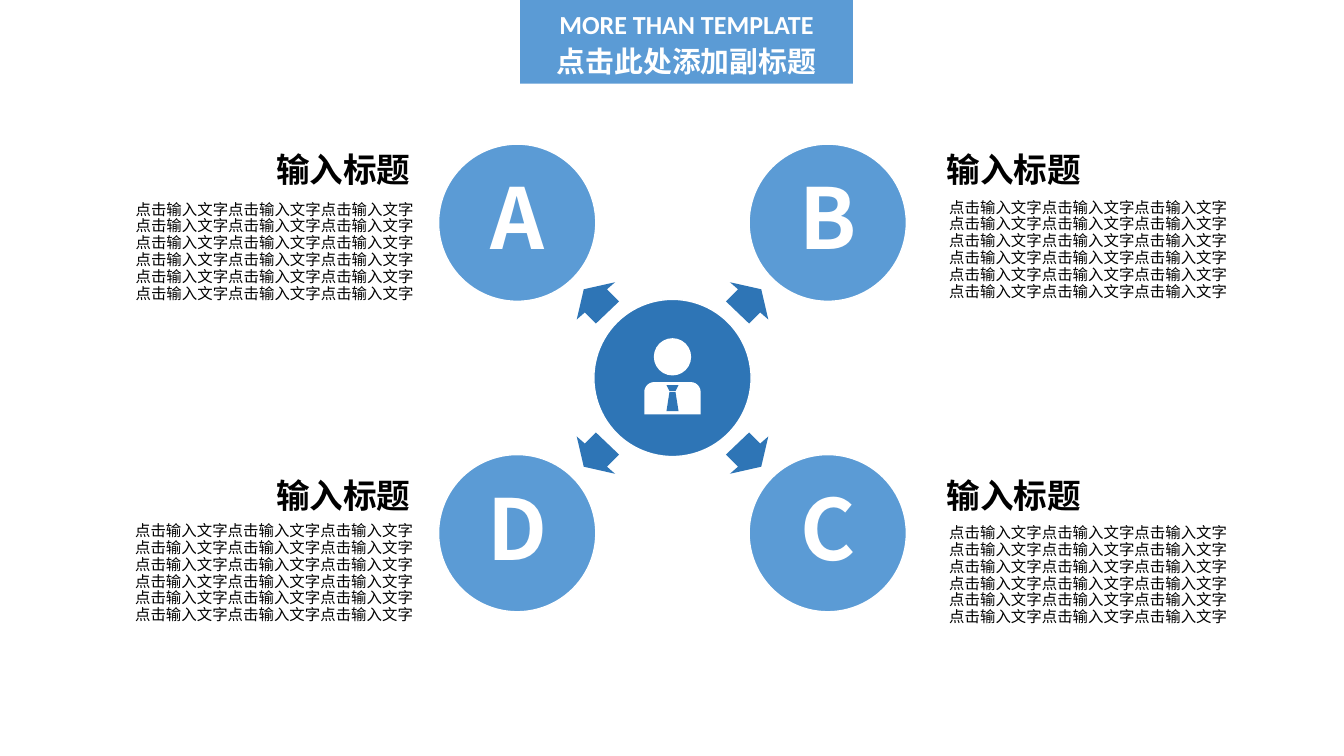
from pptx import Presentation
from pptx.dml.color import RGBColor
from pptx.enum.shapes import MSO_SHAPE as SHAPE
from pptx.enum.text import MSO_ANCHOR as ANCHOR, MSO_AUTO_SIZE as AUTOSIZE, PP_ALIGN as ALIGN
from pptx.oxml.ns import qn
from pptx.util import Inches, Pt

CJK_FONT = "Noto Sans CJK SC"
LIGHT_BLUE, DARK_BLUE, WHITE, BLACK = "5B9BD5", "2E75B6", "FFFFFF", "000000"
RADIUS = 0.78
SPREAD = 1.54  # offset of each lettered circle from the hub, in x and y
HUB = (6.67, 3.75)
# Lower-right arrow outline, as offsets from the hub centre
ARROW = [(0.53, 0.76), (0.65, 0.88), (0.57, 0.95), (0.88, 0.88),
         (0.95, 0.58), (0.87, 0.65), (0.76, 0.54)]
# Tie knot and blade, as offsets from the top centre of the torso
TIE = [[(-0.06, 0.03), (0.06, 0.03), (0.03, 0.09), (-0.03, 0.09)],
       [(-0.03, 0.1), (0.03, 0.1), (0.06, 0.29), (-0.06, 0.29)]]
HEADING = "输入标题"
BODY = "点击输入文字" * 18
# Letter, x sign, y sign, heading (left, top), body (left, top, width)
TOPICS = [
    ("A", -1, -1, (2.62, 1.43), (1.22, 1.95, 3.01)),
    ("B", 1, -1, (9.29, 1.43), (9.26, 1.93, 3.07)),
    ("C", 1, 1, (9.29, 4.66), (9.26, 5.16, 3.07)),
    ("D", -1, 1, (2.62, 4.66), (1.18, 5.14, 3.08)),
]


def rgb(value):
    return RGBColor.from_string(value)


def write(paragraph, text, size=11, font=CJK_FONT, color=BLACK, bold=False,
          align=ALIGN.LEFT, spacing=None):
    paragraph.alignment = align
    paragraph.line_spacing = spacing
    run = paragraph.add_run()
    run.text = text
    run.font.size, run.font.bold, run.font.name = Pt(size), bold, font
    run.font.color.rgb = rgb(color)
    east_asian = run.font._element.makeelement(qn("a:ea"), {"typeface": font})
    run.font._element.find(qn("a:latin")).addnext(east_asian)


def paint(shape, fill, line=None):
    shape.shadow.inherit = False
    shape.fill.solid()
    shape.fill.fore_color.rgb = rgb(fill)
    if line:
        shape.line.color.rgb = rgb(line)
        shape.line.width = Pt(1)
    else:
        shape.line.fill.background()


def add_preset(slide, kind, box, fill, line=None):
    shape = slide.shapes.add_shape(kind, *map(Inches, box))
    paint(shape, fill, line)
    return shape


def add_circle(slide, center, radius, fill, line=None):
    x, y = center
    box = (x - radius, y - radius, 2 * radius, 2 * radius)
    return add_preset(slide, SHAPE.OVAL, box, fill, line)


def add_outline(slide, origin, contours, fill, signs=(1, 1)):
    """Draw closed contours of offsets from origin, mirrored by signs."""
    builder = None
    for contour in contours:
        start, *rest = [tuple(Inches(o + s * d) for o, s, d in zip(origin, signs, point))
                        for point in contour]
        if builder is None:
            builder = slide.shapes.build_freeform(*start)
        else:
            builder.move_to(*start)
        builder.add_line_segments(rest, close=True)
    paint(builder.convert_to_shape(), fill)


def add_text(slide, box, text, wrap=True, **style):
    frame = slide.shapes.add_textbox(*map(Inches, box)).text_frame
    frame.word_wrap = wrap
    write(frame.paragraphs[0], text, **style)


def add_banner(slide, box):
    title = slide.shapes.title
    title.left, title.top, title.width, title.height = map(Inches, box)
    title.fill.solid()
    title.fill.fore_color.rgb = rgb(LIGHT_BLUE)
    frame = title.text_frame
    frame.auto_size, frame.word_wrap = AUTOSIZE.NONE, True
    frame.vertical_anchor = ANCHOR.MIDDLE
    style = dict(color=WHITE, bold=True, align=ALIGN.CENTER, spacing=1.1)
    write(frame.paragraphs[0], "MORE THAN TEMPLATE", size=18.6, font="Calibri", **style)
    write(frame.add_paragraph(), "点击此处添加副标题", size=20.6, **style)


def add_hub(slide, center):
    x, y = center
    add_circle(slide, center, RADIUS, DARK_BLUE, WHITE)
    add_circle(slide, (x, y - 0.21), 0.185, WHITE)
    torso_top = y + 0.04
    torso = add_preset(slide, SHAPE.ROUND_2_SAME_RECTANGLE,
                       (x - 0.28, torso_top, 0.56, 0.32), WHITE)
    torso.adjustments[0] = 0.31
    add_outline(slide, (x, torso_top), TIE, DARK_BLUE)


def add_topic(slide, hub, letter, x_sign, y_sign, heading_at, body_at):
    x, y = hub
    add_outline(slide, hub, [ARROW], DARK_BLUE, (x_sign, y_sign))
    circle = add_circle(slide, (x + x_sign * SPREAD, y + y_sign * SPREAD),
                        RADIUS, LIGHT_BLUE, WHITE)
    frame = circle.text_frame
    frame.margin_left = frame.margin_right = frame.margin_top = frame.margin_bottom = 0
    frame.vertical_anchor = ANCHOR.MIDDLE
    write(frame.paragraphs[0], letter, size=60, color=WHITE, bold=True,
          align=ALIGN.CENTER, spacing=0.9)
    add_text(slide, (*heading_at, 1.55, 0.5), HEADING, wrap=False, size=24, bold=True,
             align=ALIGN.LEFT if x_sign > 0 else ALIGN.RIGHT)
    add_text(slide, (*body_at, 1.11), BODY, align=ALIGN.CENTER, spacing=Pt(12))


def main():
    deck = Presentation()
    deck.slide_width, deck.slide_height = Inches(13.33), Inches(7.5)
    slide = deck.slides.add_slide(deck.slide_layouts[5])
    add_banner(slide, (5.16, 0, 3.3, 0.83))
    add_hub(slide, HUB)
    for topic in TOPICS:
        add_topic(slide, HUB, *topic)
    deck.save("out.pptx")


if __name__ == "__main__":
    main()
